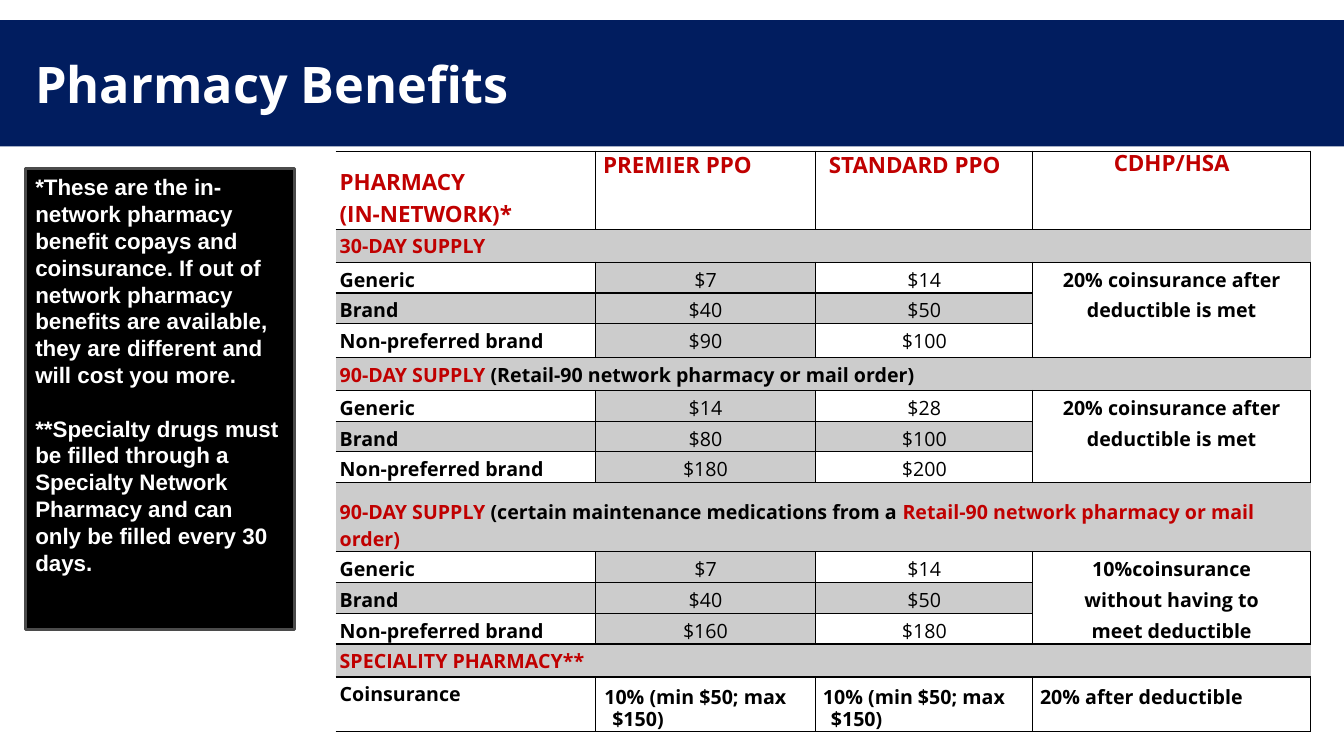
"""Build the Pharmacy Benefits slide with its copay table and side note."""
from lxml import etree
from pptx import Presentation, util as u
from pptx.dml.color import RGBColor
from pptx.enum import shapes, text
from pptx.oxml import ns

COLORS = {"navy": "011D5F", "red": "C00000", "black": "000000", "white": "FFFFFF",
          "grey": "CCCCCC", "edge": "4B4B4B"}
CENTER, LEFT = text.PP_ALIGN.CENTER, text.PP_ALIGN.LEFT


def add_run(paragraph, wording, size, color, bold=True, font="Open Sans"):
    run = paragraph.add_run()
    run.text = wording
    run.font.name, run.font.size, run.font.bold = font, u.Pt(size), bold
    run.font.color.rgb = RGBColor.from_string(COLORS[color])


def fill_cell(cell, runs, size=14, bold=True, align=LEFT, spacing=1.15, top=0.0, left=0.1, hang=0.0):
    cell.margin_top = u.Cm(top)
    if align == CENTER:
        cell.margin_left = cell.margin_right = u.Cm(left)
    paragraph = cell.text_frame.paragraphs[0]
    paragraph.alignment, paragraph.line_spacing = align, spacing
    if align == LEFT:
        properties = paragraph._p.get_or_add_pPr()
        properties.set("marL", str(u.Cm(left)))
        properties.set("indent", str(u.Cm(hang)))
    for wording, color in runs:
        add_run(paragraph, wording, size, color, bold)


presentation = Presentation()
presentation.slide_width, presentation.slide_height = u.Cm(33.87), u.Cm(19.05)
slide = presentation.slides.add_slide(presentation.slide_layouts[6])

banner = slide.shapes.add_shape(shapes.MSO_SHAPE.RECTANGLE, 0, u.Cm(0.51), u.Cm(33.87), u.Cm(3.18))
banner.shadow.inherit = False
banner.fill.solid()
banner.fill.fore_color.rgb = RGBColor.from_string(COLORS["navy"])
banner.line.fill.background()
banner.text_frame.word_wrap = True
banner.text_frame.margin_left = u.Cm(0.89)
banner.text_frame.vertical_anchor = text.MSO_ANCHOR.MIDDLE
title = banner.text_frame.paragraphs[0]
title.alignment = LEFT
add_run(title, "Pharmacy Benefits", 36, "white")

plain_section = dict(spacing=u.Pt(10.3), top=0.4)
sections = [
    ([("30-DAY SUPPLY", "red")], plain_section, 0.83,
     [("$7", "$14"), ("$40", "$50"), ("$90", "$100")],
     [0.77, 0.77, 0.85], "20% coinsurance after deductible is met"),
    ([("90-DAY SUPPLY ", "red"), ("(Retail-90 network pharmacy or mail order)", "black")],
     plain_section, 0.83,
     [("$14", "$28"), ("$80", "$100"), ("$180", "$200")],
     [0.77] * 3, "20% coinsurance after deductible is met"),
    ([("90-DAY SUPPLY ", "red"), ("(certain maintenance medications from a ", "black"),
      ("Retail-90 network pharmacy or mail order)", "red")],
     dict(spacing=1.0, top=0.4), 1.74,
     [("$7", "$14"), ("$40", "$50"), ("$160", "$180")],
     [0.77] * 3, "10%coinsurance without having to meet deductible"),
    ([("SPECIALITY PHARMACY**", "red")], plain_section, 0.83, [], [], ""),
]
drug_tiers = ["Generic", "Brand", "Non-preferred brand"]

row_heights = [1.97]
for section in sections:
    row_heights += [section[2], *section[4]]
row_heights.append(1.38)
column_widths = [6.54, 5.56, 5.47, 7.0]

frame = slide.shapes.add_table(len(row_heights), 4, u.Cm(8.46), u.Cm(3.81),
                               u.Cm(sum(column_widths)), u.Cm(sum(row_heights)))
table = frame.table
table.first_row = table.horz_banding = False
table._tbl.tblPr.find(ns.qn("a:tableStyleId")).text = "{2D5ABB26-0587-4C30-8999-92F81FD0307C}"
for column, width in zip(table.columns, column_widths):
    column.width = u.Cm(width)
for row, height in zip(table.rows, row_heights):
    row.height = u.Cm(height)
for cell in table.iter_cells():
    cell.margin_left = cell.margin_right = cell.margin_top = cell.margin_bottom = 0

fill_cell(table.cell(0, 0), [("PHARMACY", "red")], size=16, spacing=1.0, top=0.39)
network = table.cell(0, 0).text_frame.add_paragraph()
network.space_before = u.Pt(1.2)
network._p.get_or_add_pPr().set("marL", str(u.Cm(0.1)))
add_run(network, "(IN-NETWORK)*", 16, "red")
fill_cell(table.cell(0, 1), [("PREMIER PPO", "red")], 16, spacing=u.Pt(9), top=0.41, left=0.66, hang=-0.46)
fill_cell(table.cell(0, 2), [("STANDARD PPO", "red")], 16, spacing=u.Pt(9), top=0.41, left=0.69, hang=-0.36)
fill_cell(table.cell(0, 3), [("CDHP/HSA", "red")], 16, align=CENTER, spacing=u.Pt(9.7), top=0.34, left=0)

grey_cells, section_rows = set(), set()
row_index = 1
for heading, layout, _, copays, _, coinsurance in sections:
    section_rows.add(row_index)
    grey_cells.update((row_index, column) for column in range(4))
    table.cell(row_index, 0).merge(table.cell(row_index, 3))
    fill_cell(table.cell(row_index, 0), heading, **layout)
    row_index += 1
    if copays:
        table.cell(row_index, 3).merge(table.cell(row_index + 2, 3))
        fill_cell(table.cell(row_index, 3), [(coinsurance, "black")], align=CENTER, left=0.61)
    for tier, prices in zip(drug_tiers, copays):
        fill_cell(table.cell(row_index, 0), [(tier, "black")])
        for column, price in enumerate(prices, start=1):
            fill_cell(table.cell(row_index, column), [(price, "black")], bold=False, align=CENTER, left=0.61)
        grey_cells.add((row_index, 1))
        if tier == "Brand":
            grey_cells.update([(row_index, 0), (row_index, 2)])
        row_index += 1

fill_cell(table.cell(row_index, 0), [("Coinsurance", "black")])
specialty_terms = [("10% (min $50; max $150)", 0.43), ("10% (min $50; max $150)", 0.38),
                   ("20% after deductible", 0.38)]
for column, (terms, left) in enumerate(specialty_terms, start=1):
    fill_cell(table.cell(row_index, column), [(terms, "black")], spacing=0.83, top=0.25, left=left, hang=-0.2)

for row in range(len(row_heights)):
    for column in range(4):
        cell = table.cell(row, column)
        cell_properties = cell._tc.get_or_add_tcPr()
        in_section = row in section_rows
        visible = {"lnL": column > 0 and not in_section, "lnR": not in_section, "lnT": True, "lnB": True}
        for side, shown in visible.items():
            border = etree.SubElement(cell_properties, ns.qn(f"a:{side}"), w=str(u.Pt(1)))
            if shown:
                paint = etree.SubElement(border, ns.qn("a:solidFill"))
                etree.SubElement(paint, ns.qn("a:srgbClr"), val=COLORS["black"])
            else:
                etree.SubElement(border, ns.qn("a:noFill"))
        if (row, column) in grey_cells:
            cell.fill.solid()
            cell.fill.fore_color.rgb = RGBColor.from_string(COLORS["grey"])
        else:
            cell.fill.background()

note = slide.shapes.add_shape(shapes.MSO_SHAPE.RECTANGLE, u.Cm(0.64), u.Cm(4.24), u.Cm(6.78), u.Cm(11.63))
note.shadow.inherit = False
note.fill.solid()
note.fill.fore_color.rgb = RGBColor.from_string(COLORS["black"])
note.line.color.rgb = RGBColor.from_string(COLORS["edge"])
note.line.width = u.Pt(2)
note.text_frame.word_wrap = True
note.text_frame.vertical_anchor = text.MSO_ANCHOR.TOP
first_note = note.text_frame.paragraphs[0]
second_note = note.text_frame.add_paragraph()
second_note.space_before = u.Pt(19)
first_note.alignment = second_note.alignment = LEFT
add_run(first_note, "*These are the in-network pharmacy benefit copays and coinsurance. If out of network "
        "pharmacy benefits are available, they are different and will cost you more.", 16, "white", font="Arial")
add_run(second_note, "**Specialty drugs must be filled through a Specialty Network Pharmacy and can only be "
        "filled every 30 days.", 16, "white", font="Arial")

presentation.save("out.pptx")
